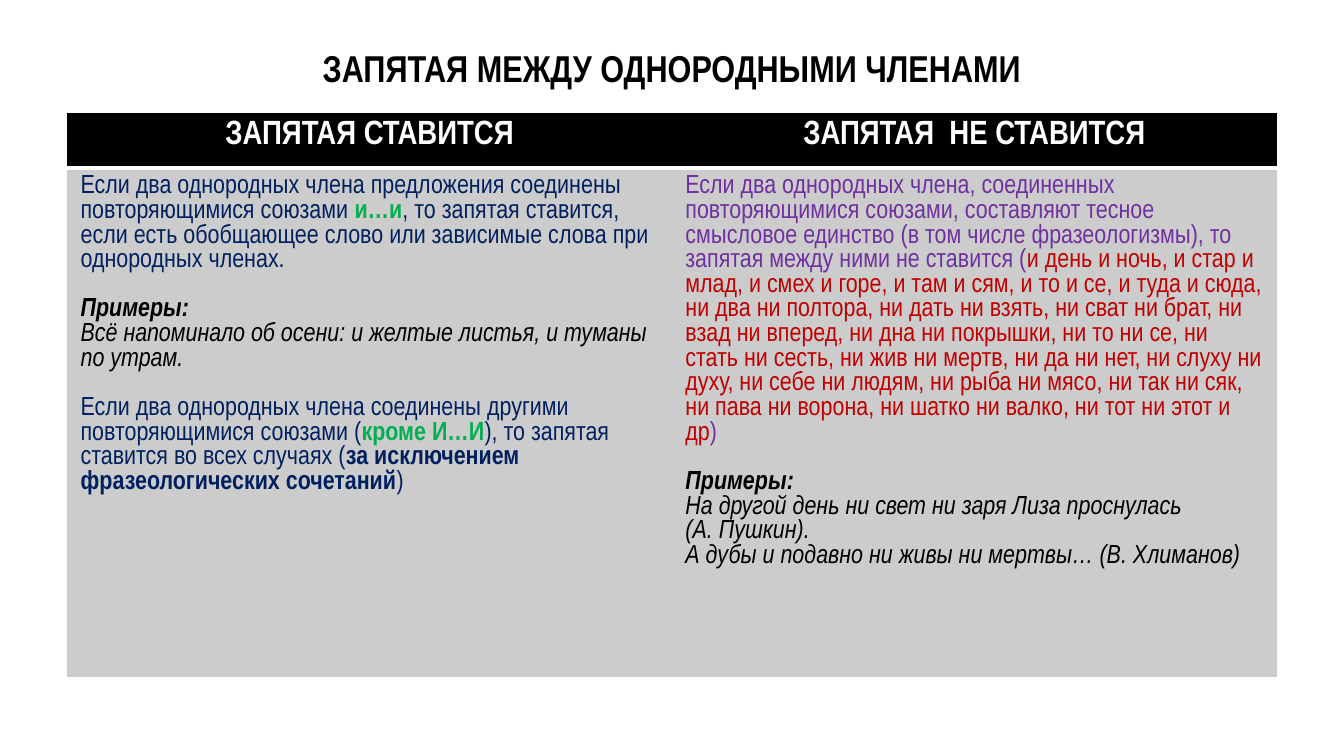
"""Builds a slide with a table of comma rules for homogeneous sentence parts."""
from lxml import etree
from pptx import Presentation
from pptx import util as u
from pptx.dml import color as c
from pptx.enum import text as t
from pptx.oxml import ns

PX = 9525
COLORS = {
    "black": "000000",
    "white": "FFFFFF",
    "gray": "CCCCCC",
    "navy": "002060",
    "green": "00B050",
    "purple": "7030A0",
    "red": "C00000",
}
FORMATS = {
    "title": {"size": 20, "bold": True},
    "heading": {"size": 18, "color": "white", "bold": True},
    "rule": {"color": "navy"},
    "strong": {"color": "navy", "bold": True},
    "union": {"color": "green", "bold": True},
    "exception": {"color": "purple"},
    "idiom": {"color": "red"},
    "label": {"bold": True, "italic": True},
    "example": {"italic": True},
}
TITLE = [[("title", "ЗАПЯТАЯ МЕЖДУ ОДНОРОДНЫМИ ЧЛЕНАМИ")]]
HEADINGS = ["ЗАПЯТАЯ СТАВИТСЯ", "ЗАПЯТАЯ  НЕ СТАВИТСЯ"]
COMMA = [
    [
        ("rule", "Если два однородных члена предложения соединены повторяющимися союзами "),
        ("union", "и…и"),
        ("rule", ", то запятая ставится, если есть обобщающее слово или зависимые слова "
                 "при однородных членах."),
    ],
    [("label", "Примеры:")],
    [("example", "Всё напоминало об осени: и желтые листья, и туманы по утрам.")],
    [
        ("rule", "Если два однородных члена соединены другими повторяющимися союзами ("),
        ("union", "кроме И…И"),
        ("rule", "), то запятая ставится во всех случаях ("),
        ("strong", "за исключением фразеологических сочетаний"),
        ("rule", ")"),
    ],
]
NO_COMMA = [
    [
        ("exception", "Если два однородных члена, соединенных повторяющимися союзами, "
                      "составляют тесное смысловое единство (в том числе фразеологизмы), "
                      "то запятая между ними не ставится ("),
        ("idiom", "и день и ночь, и стар и млад, и смех и горе, и там и сям, и то и се, "
                  "и туда и сюда, ни два ни полтора, ни дать ни взять, ни сват ни брат, "
                  "ни взад ни вперед, ни дна ни покрышки, ни то ни се, ни стать ни сесть, "
                  "ни жив ни мертв, ни да ни нет, ни слуху ни духу, ни себе ни людям, "
                  "ни рыба ни мясо, ни так ни сяк, ни пава ни ворона, "
                  "ни шатко ни валко, ни тот ни этот и др"),
        ("exception", ")"),
    ],
    [("label", "Примеры:")],
    [("example", "На другой день ни свет ни заря Лиза проснулась")],
    [("example", "(А. Пушкин).")],
    [("example", "А дубы и подавно ни живы ни мертвы… (В. Хлиманов)")],
]


def rgb(name):
    return c.RGBColor.from_string(COLORS[name])


def add_run(paragraph, text, *, size=14, color="black", bold=False, italic=False):
    run = paragraph.add_run()
    run.text = text
    font = run.font
    font.name = "Arial Narrow"
    font.size = u.Pt(size)
    font.bold, font.italic = bold, italic
    font.color.rgb = rgb(color)


class RulesSlide:
    PLAIN_TABLE = "{2D5ABB26-0587-4C30-8999-92F81FD0307C}"
    SECTION_GAP = u.Pt(13.2)

    def __init__(self, presentation):
        self.slide = presentation.slides.add_slide(presentation.slide_layouts[6])

    def fill_text(self, frame, paragraphs, align=t.PP_ALIGN.LEFT):
        for index, runs in enumerate(paragraphs):
            paragraph = frame.add_paragraph() if index else frame.paragraphs[0]
            paragraph.alignment = align
            if index and runs[0][0] in ("label", "rule"):
                paragraph.space_before = self.SECTION_GAP
            for style, text in runs:
                add_run(paragraph, text, **FORMATS[style])

    def title(self, paragraphs, left, top, width, height):
        box = self.slide.shapes.add_textbox(left * PX, top * PX, width * PX, height * PX)
        box.text_frame.word_wrap = True
        box.text_frame.vertical_anchor = t.MSO_ANCHOR.MIDDLE
        self.fill_text(box.text_frame, paragraphs, t.PP_ALIGN.CENTER)

    def underline(self, cell, color, points):
        line = etree.Element(ns.qn("a:lnB"), w=str(u.Pt(points)))
        fill = etree.SubElement(line, ns.qn("a:solidFill"))
        etree.SubElement(fill, ns.qn("a:srgbClr"), val=COLORS[color])
        cell._tc.get_or_add_tcPr().insert(0, line)

    def table(self, headings, bodies, left, top, width, row_heights):
        shape = self.slide.shapes.add_table(
            len(row_heights), len(headings),
            left * PX, top * PX, width * PX, sum(row_heights) * PX)
        table = shape.table
        table.first_row = table.horz_banding = False
        table._tbl.tblPr.find(ns.qn("a:tableStyleId")).text = self.PLAIN_TABLE
        for row, height in zip(table.rows, row_heights):
            row.height = height * PX
        for column, (heading, body) in enumerate(zip(headings, bodies)):
            head_cell, body_cell = table.cell(0, column), table.cell(1, column)
            for cell, color in ((head_cell, "black"), (body_cell, "gray")):
                cell.fill.solid()
                cell.fill.fore_color.rgb = rgb(color)
            self.underline(head_cell, "white", 2)
            self.fill_text(head_cell.text_frame, [[("heading", heading)]], t.PP_ALIGN.CENTER)
            self.fill_text(body_cell.text_frame, body)


def main():
    presentation = Presentation()
    presentation.slide_width, presentation.slide_height = 960 * PX, 540 * PX
    slide = RulesSlide(presentation)
    slide.title(TITLE, 48, 22, 864, 52)
    slide.table(HEADINGS, [COMMA, NO_COMMA], 48, 81, 864, [39, 39])
    presentation.save("out.pptx")


if __name__ == "__main__":
    main()
